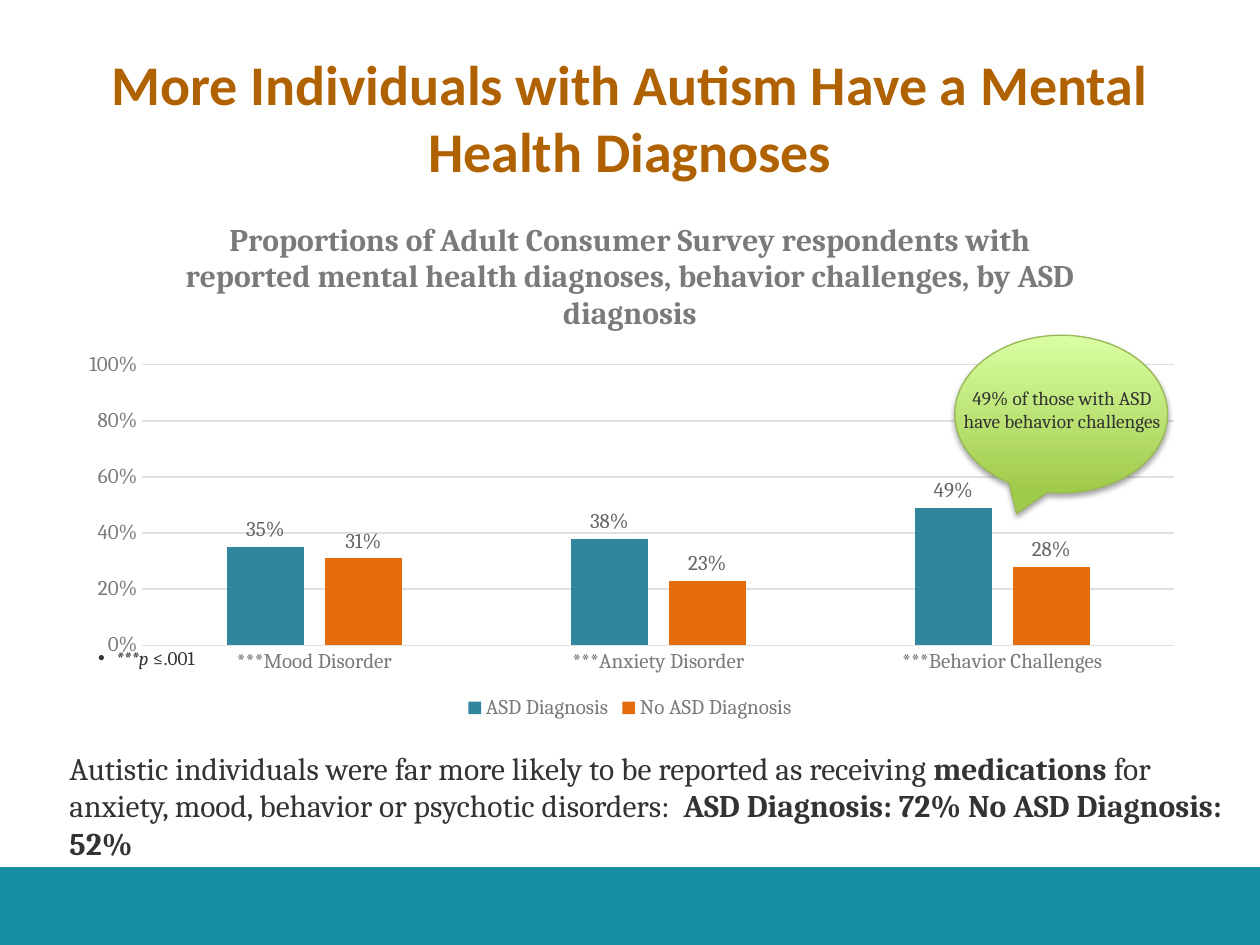
from lxml import etree
from pptx import Presentation
from pptx.chart.data import CategoryChartData
from pptx.dml.color import RGBColor
from pptx.enum.chart import XL_CHART_TYPE, XL_LABEL_POSITION, XL_LEGEND_POSITION, XL_TICK_MARK
from pptx.enum.shapes import MSO_SHAPE
from pptx.enum.text import MSO_ANCHOR, MSO_AUTO_SIZE, PP_ALIGN
from pptx.oxml import parse_xml
from pptx.oxml.ns import nsdecls, qn
from pptx.util import Cm, Pt

COLUMNS = XL_CHART_TYPE.COLUMN_CLUSTERED
OUTSIDE_END = XL_LABEL_POSITION.OUTSIDE_END
BOTTOM = XL_LEGEND_POSITION.BOTTOM
NO_TICK = XL_TICK_MARK.NONE
RECTANGLE = MSO_SHAPE.RECTANGLE
CALLOUT = MSO_SHAPE.OVAL_CALLOUT
TOP, MIDDLE = MSO_ANCHOR.TOP, MSO_ANCHOR.MIDDLE
LEFT, CENTER = PP_ALIGN.LEFT, PP_ALIGN.CENTER
NO_AUTOFIT = MSO_AUTO_SIZE.NONE

HEADING, BODY = "Calibri", "Cambria"
INK, GRAY, GRID = "333333", "7A7A7A", "E0E0E0"
SERIES = [
    ("ASD Diagnosis", (0.35, 0.38, 0.49), "31859C"),
    ("No ASD Diagnosis", (0.31, 0.23, 0.28), "E46C0A"),
]


def color(value):
    return RGBColor.from_string(value)


def set_font(font, size, value, name=BODY, bold=False, italic=False):
    font.size, font.name = Pt(size), name
    font.bold, font.italic = bold, italic
    font.color.rgb = color(value)


def place(shape, box):
    shape.left, shape.top, shape.width, shape.height = (Cm(v) for v in box)


def format_frame(tf, anchor=TOP, inset=0.13):
    tf.word_wrap = True
    tf.auto_size = NO_AUTOFIT
    tf.vertical_anchor = anchor
    tf.margin_left = tf.margin_right = tf.margin_top = tf.margin_bottom = Cm(inset)


def add_runs(p, parts, size):
    for text, bold, italic in parts:
        r = p.add_run()
        r.text = text
        set_font(r.font, size, INK, bold=bold, italic=italic)


def add_text(s, box, parts, size, align=LEFT):
    tb = s.shapes.add_textbox(*(Cm(v) for v in box))
    format_frame(tb.text_frame)
    p = tb.text_frame.paragraphs[0]
    p.alignment = align
    add_runs(p, parts, size)


def add_footer(s, box):
    bar = s.shapes.add_shape(RECTANGLE, *(Cm(v) for v in box))
    bar.shadow.inherit = False
    bar.fill.solid()
    bar.fill.fore_color.rgb = color("168EA2")
    bar.line.fill.background()


def fill_title(s, box):
    title = s.shapes.title
    place(title, box)
    tf = title.text_frame
    tf.text = "More Individuals with Autism Have a Mental Health Diagnoses"
    format_frame(tf, MIDDLE)
    p = tf.paragraphs[0]
    p.alignment = CENTER
    set_font(p.runs[0].font, 32, "B06100", HEADING, bold=True)


def set_plot_layout(chart, x, y, w, h):
    plot_area = chart.element.find(".//" + qn("c:plotArea"))
    for old in plot_area.findall(qn("c:layout")):
        plot_area.remove(old)
    layout = parse_xml(f"<c:layout {nsdecls('c')}><c:manualLayout/></c:layout>")
    settings = [("layoutTarget", "inner"), ("xMode", "edge"), ("yMode", "edge"),
                ("x", x), ("y", y), ("w", w), ("h", h)]
    for tag, value in settings:
        etree.SubElement(layout[0], qn("c:" + tag)).set("val", str(value))
    plot_area.insert(0, layout)


def format_axes(chart):
    for axis in (chart.category_axis, chart.value_axis):
        axis.major_tick_mark = axis.minor_tick_mark = NO_TICK
        set_font(axis.tick_labels.font, 12, GRAY)
    line = chart.category_axis.format.line
    line.color.rgb, line.width = color(GRID), Pt(0.75)
    values = chart.value_axis
    values.minimum_scale, values.maximum_scale, values.major_unit = 0, 1, 0.2
    values.tick_labels.number_format = "0%"
    values.tick_labels.number_format_is_linked = False
    values.format.line.fill.background()
    grid = values.major_gridlines.format.line
    grid.color.rgb, grid.width = color(GRID), Pt(0.75)


def add_diagnosis_chart(s, box):
    data = CategoryChartData(number_format="0%")
    data.categories = ["***Mood Disorder", "***Anxiety Disorder", "***Behavior Challenges"]
    for name, values, _ in SERIES:
        data.add_series(name, values)
    chart = s.shapes.add_chart(COLUMNS, *(Cm(v) for v in box), data).chart
    set_font(chart.font, 10, INK)
    chart.has_title = True
    tf = chart.chart_title.text_frame
    tf.text = ("Proportions of Adult Consumer Survey respondents with reported "
               "mental health diagnoses, behavior challenges, by ASD diagnosis")
    set_font(tf.paragraphs[0].runs[0].font, 18, GRAY, bold=True)
    chart.chart_title.include_in_layout = False
    chart.has_legend = True
    chart.legend.position = BOTTOM
    chart.legend.include_in_layout = False
    set_font(chart.legend.font, 12, GRAY)
    format_axes(chart)
    plot = chart.plots[0]
    plot.gap_width, plot.overlap, plot.vary_by_categories = 219, -27, False
    for series, (_, _, fill) in zip(plot.series, SERIES):
        series.format.fill.solid()
        series.format.fill.fore_color.rgb = color(fill)
        labels = series.data_labels
        labels.show_value = True
        labels.position = OUTSIDE_END
        labels.number_format, labels.number_format_is_linked = "0%", False
        set_font(labels.font, 12, "666666")
    set_plot_layout(chart, 0.07, 0.32, 0.91, 0.53)


def fill_significance_note(s, box):
    note = s.placeholders[1]
    place(note, box)
    format_frame(note.text_frame)
    p = note.text_frame.paragraphs[0]
    p.space_before = Pt(0)
    pPr = p._p.get_or_add_pPr()
    pPr.set("marL", str(Cm(0.36)))
    pPr.set("indent", str(-Cm(0.36)))
    etree.SubElement(pPr, qn("a:buChar")).set("char", "•")
    add_runs(p, [("***p ", False, True), ("≤.001", False, False)], 11)
    note.element.getparent().append(note.element)


def add_callout(s, box):
    left, top, width, height = box
    bubble = s.shapes.add_shape(CALLOUT, *(Cm(v) for v in box))
    bubble.adjustments[0], bubble.adjustments[1] = -0.21, 0.63
    bubble.fill.gradient()
    bubble.fill.gradient_angle = 90
    for stop, value in zip(bubble.fill.gradient_stops, ("A0CA4A", "DAFFA3")):
        stop.color.rgb = color(value)
    bubble.line.color.rgb, bubble.line.width = color("98B955"), Pt(0.75)
    bubble.shadow.inherit = False
    bubble.element.spPr.find(qn("a:effectLst")).append(parse_xml(
        f'<a:outerShdw {nsdecls("a")} blurRad="{Pt(3)}" dist="{Pt(1.8)}" dir="5400000" '
        'rotWithShape="0"><a:srgbClr val="000000"><a:alpha val="35000"/></a:srgbClr></a:outerShdw>'))
    add_text(s, (left, top + 0.89, width + 0.03, 1.09),
             [("49% of those with ASD have behavior challenges", False, False)], 11, CENTER)


def add_medication_text(s, box):
    add_text(s, box, [
        ("Autistic individuals were far more likely to be reported as receiving ", False, False),
        ("medications", True, False),
        (" for anxiety, mood, behavior or psychotic disorders:  ", False, False),
        ("ASD Diagnosis: 72% No ASD Diagnosis: 52%", True, False),
    ], 18)


def main():
    prs = Presentation()
    prs.slide_width, prs.slide_height = Cm(25.4), Cm(19.05)
    s = prs.slides.add_slide(prs.slide_layouts[1])
    add_footer(s, (0, 17.48, 25.4, 1.57))
    fill_title(s, (1.27, 0.76, 22.86, 3.18))
    add_diagnosis_chart(s, (1.27, 3.94, 22.86, 10.67))
    add_medication_text(s, (1.27, 14.96, 23.52, 2.44))
    fill_significance_note(s, (1.85, 12.9, 10.19, 1.4))
    add_callout(s, (19.25, 6.76, 4.29, 3.18))
    prs.save("out.pptx")


if __name__ == "__main__":
    main()
